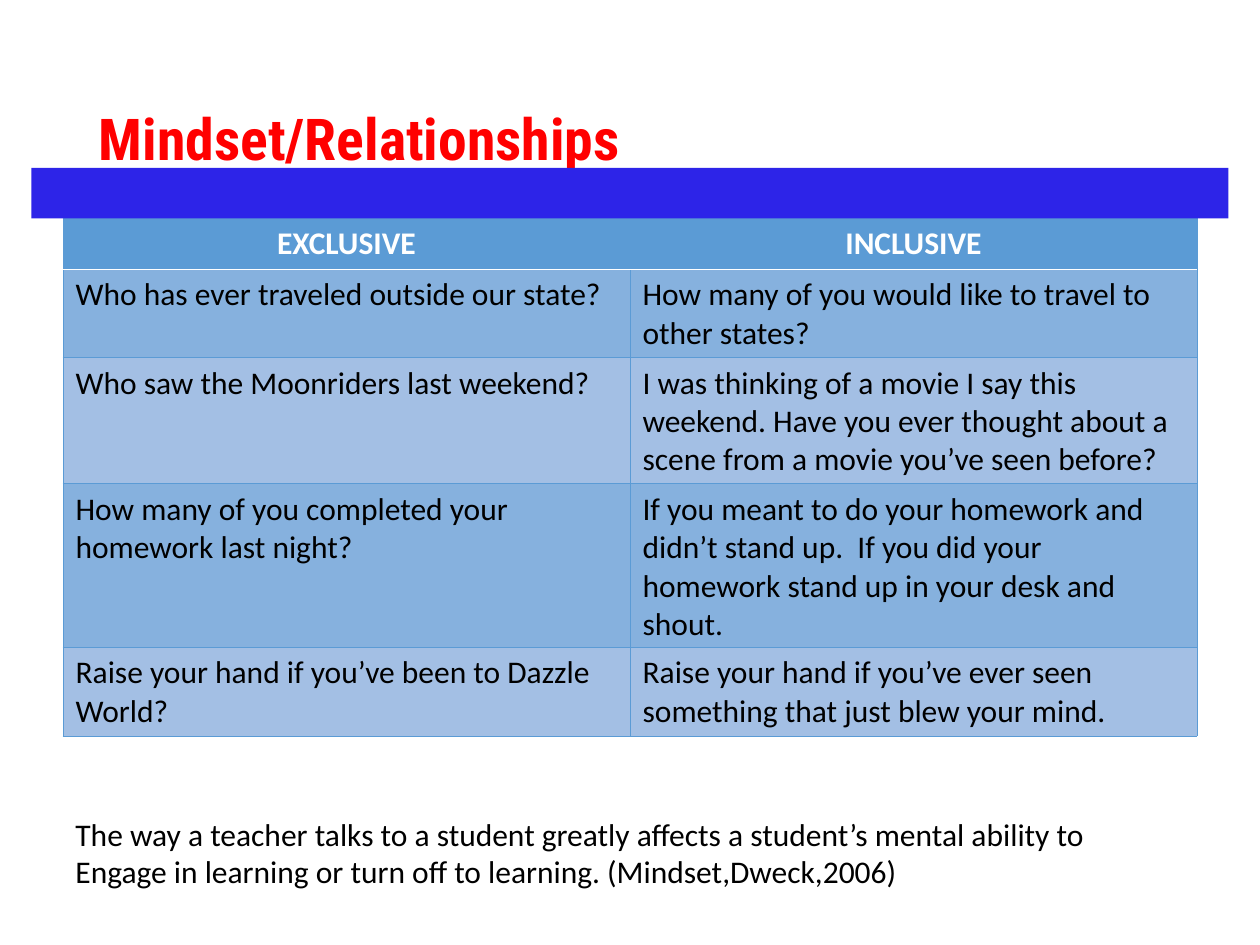
"""Build the Mindset/Relationships slide comparing exclusive and inclusive questions."""
import pptx
import pptx.dml.color
import pptx.enum.shapes
import pptx.enum.text
import pptx.oxml
import pptx.oxml.ns
import pptx.util

Pt = pptx.util.Pt
RGB = pptx.dml.color.RGBColor.from_string
ALIGN = pptx.enum.text.PP_ALIGN
ANCHOR = pptx.enum.text.MSO_ANCHOR

TITLE = "Mindset/Relationships"
ROWS = [
    ("EXCLUSIVE", "INCLUSIVE"),
    ("Who has ever traveled outside our state?",
     "How many of you would like to travel to other states?"),
    ("Who saw the Moonriders last weekend?",
     "I was thinking of a movie I say this weekend. Have you ever thought "
     "about a scene from a movie you’ve seen before?"),
    ("How many of you completed your homework last night?",
     "If you meant to do your homework and didn’t stand up.  If you did your "
     "homework stand up in your desk and shout."),
    ("Raise your hand if you’ve been to Dazzle World?",
     "Raise your hand if you’ve ever seen something that just blew your mind."),
]
CLOSING = [
    "The way a teacher talks to a student greatly affects a student’s mental ability to",
    "Engage in learning or turn off to learning. (Mindset,Dweck,2006)",
]

THEME = {
    "bar": "2D24E8",
    "header": "5B9BD5",
    "bands": ("A3BFE4", "86B1DE"),
    "border": ("5B9BD5", 0.5),
    "rule": ("FFFFFF", 1),
    "title": {"name": "Roboto Condensed", "size": Pt(33), "bold": True, "color": "FF0000"},
    "head": {"name": "Calibri", "size": Pt(18), "bold": True, "color": "FFFFFF"},
    "body": {"name": "Calibri", "size": Pt(18), "bold": False, "color": "000000"},
}
BOXES = {
    "title": (49.5, 28.8, 621, 104.4),
    "table": (36, 124.8, 648, 146),
    "bar": (18, 96, 684, 28.8),
    "closing": (36, 462, 682, 51),
}


def box(name):
    return [Pt(v) for v in BOXES[name]]


def write(tf, lines, style, align=ALIGN.LEFT, spacing=None):
    for i, line in enumerate(lines):
        p = tf.paragraphs[0] if i == 0 else tf.add_paragraph()
        p.alignment = align
        p.line_spacing = spacing
        r = p.add_run()
        r.text = line
        for key, value in THEME[style].items():
            if key == "color":
                r.font.color.rgb = RGB(value)
            else:
                setattr(r.font, key, value)


def add_text(s, name, lines, style, anchor, spacing=None):
    tf = s.shapes.add_textbox(*box(name)).text_frame
    tf.word_wrap = True
    tf.vertical_anchor = anchor
    write(tf, lines, style, spacing=spacing)


def set_border(cell, side, color, width):
    cell._tc.get_or_add_tcPr().append(pptx.oxml.parse_xml(
        f'<a:ln{side} {pptx.oxml.ns.nsdecls("a")} w="{Pt(width)}"><a:solidFill>'
        f'<a:srgbClr val="{color}"/></a:solidFill></a:ln{side}>'))


def add_table(s):
    table = s.shapes.add_table(len(ROWS), 2, *box("table")).table
    for i, row in enumerate(ROWS):
        head = i == 0
        fill = THEME["header"] if head else THEME["bands"][i % 2]
        for j, text in enumerate(row):
            cell = table.cell(i, j)
            for side in "LRTB":
                ruled = (i, side) in ((0, "B"), (1, "T"))
                set_border(cell, side, *THEME["rule" if ruled else "border"])
            cell.fill.solid()
            cell.fill.fore_color.rgb = RGB(fill)
            write(cell.text_frame, [text], "head" if head else "body",
                  ALIGN.CENTER if head else ALIGN.LEFT)


def add_bar(s):
    bar = s.shapes.add_shape(pptx.enum.shapes.MSO_SHAPE.RECTANGLE, *box("bar"))
    bar.shadow.inherit = False
    bar.fill.solid()
    bar.fill.fore_color.rgb = RGB(THEME["bar"])
    bar.line.fill.background()


def main():
    prs = pptx.Presentation()
    prs.slide_width, prs.slide_height = Pt(720), Pt(540)
    s = prs.slides.add_slide(prs.slide_layouts[6])
    add_text(s, "title", [TITLE], "title", ANCHOR.MIDDLE, 0.9)
    add_table(s)
    add_bar(s)
    add_text(s, "closing", CLOSING, "body", ANCHOR.TOP)
    prs.save("out.pptx")


if __name__ == "__main__":
    main()
